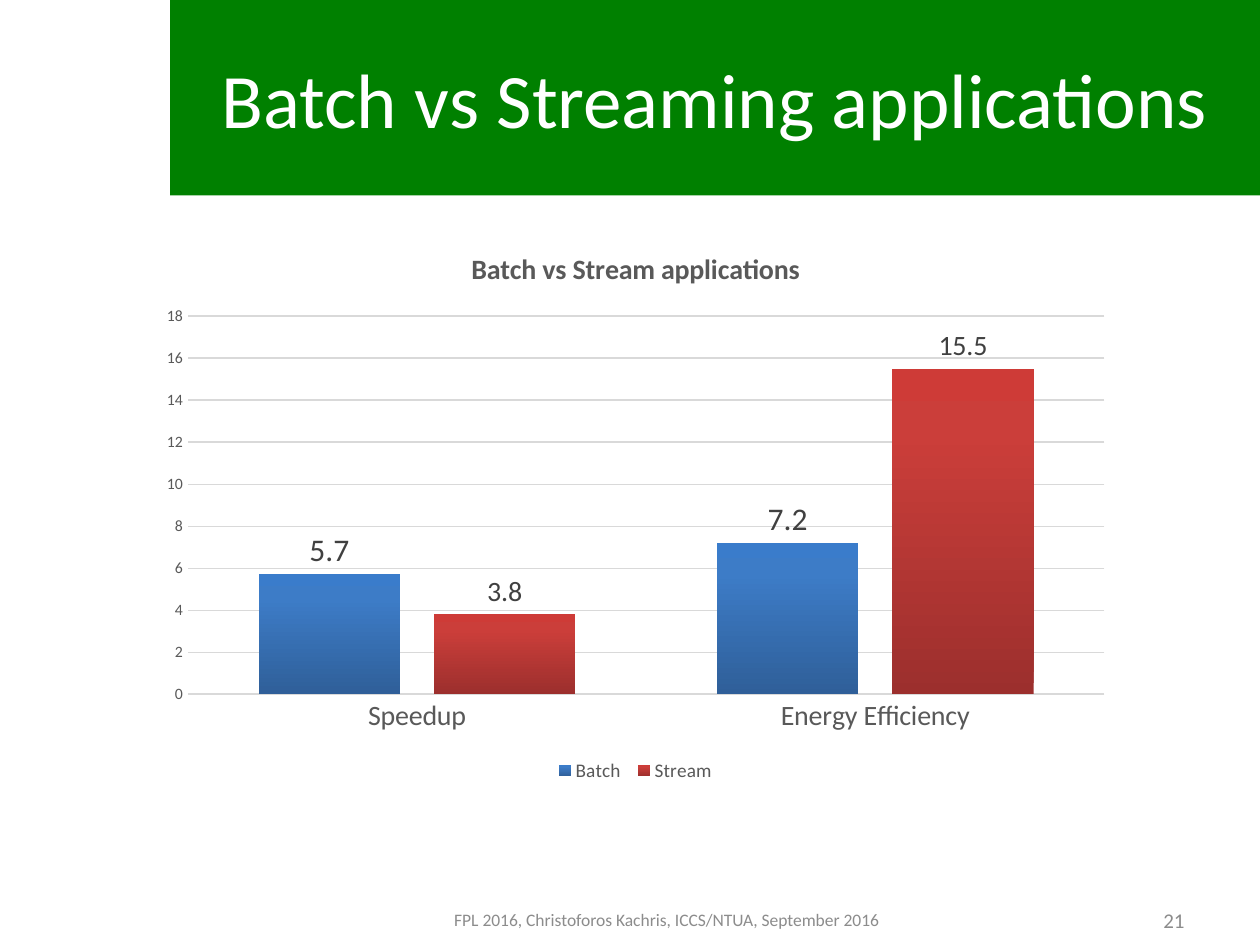
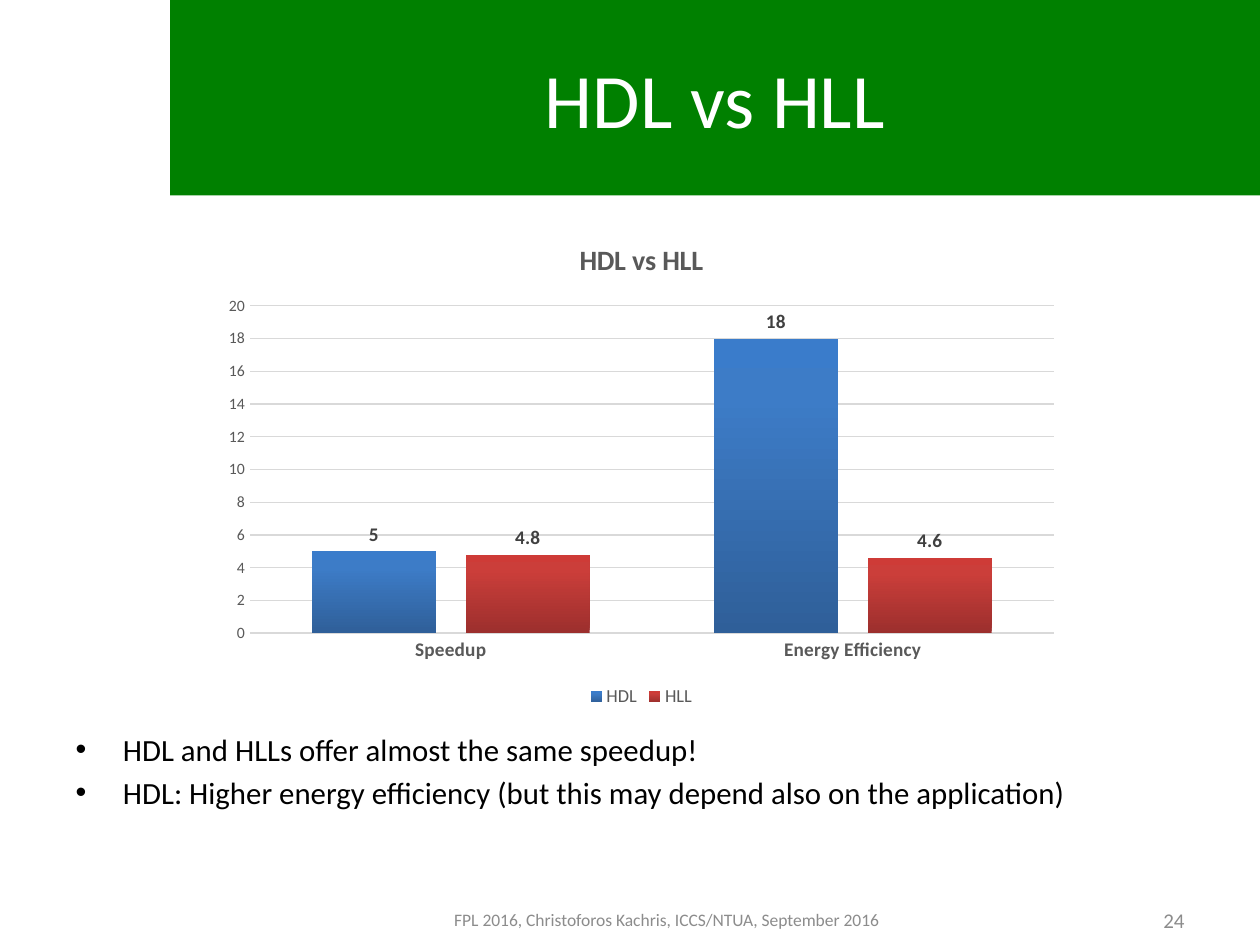
from copy import deepcopy
from pptx import Presentation
from pptx.chart.data import CategoryChartData
from pptx.dml.color import RGBColor
from pptx.enum.chart import XL_CHART_TYPE as CT, XL_LABEL_POSITION as LP
from pptx.enum.chart import XL_LEGEND_POSITION as LEG, XL_TICK_MARK as TICK
from pptx.enum.text import MSO_ANCHOR as ANCHOR, MSO_AUTO_SIZE as AUTO, PP_ALIGN as ALIGN
from pptx.util import Inches, Pt

FONT = "Calibri"
FOOTER = "FPL 2016, Christoforos Kachris, ICCS/NTUA, September 2016"
COLORS = {"band": "008000", "white": "FFFFFF", "black": "000000", "footer": "8C8C8C",
          "axis": "595959", "label": "404040", "grid": "D9D9D9"}
GRADIENTS = [["2F5F99", "3D7CC7", "3A7CCB"], ["9C2F2D", "CB3E3A", "CE3B37"]]
STOPS = [0, 0.8, 1]
CATEGORIES = ["Speedup", "Energy Efficiency"]

SLIDES = [
    {"title": "Batch vs Streaming applications", "number": "21", "layout": 5, "bullets": [],
     "chart": "Batch vs Stream applications", "box": (1.17, 1.8, 7.75, 4.45),
     "series": [("Batch ", (5.7, 7.2)), ("Stream", (3.8, 15.5))],
     "max": 18, "cat_size": 16, "legend_size": 11, "label_sizes": (18, 16), "bold": False},
    {"title": "HDL vs HLL", "number": "24", "layout": 1,
     "bullets": ["HDL and HLLs offer almost the same speedup!",
                 "HDL: Higher energy efficiency (but this may depend also on the application)"],
     "chart": "HDL vs HLL", "box": (1.68, 1.74, 6.82, 3.92),
     "series": [("HDL", (5, 18)), ("HLL", (4.8, 4.6))],
     "max": 20, "cat_size": 11, "legend_size": 10.5, "label_sizes": (11, 11), "bold": True},
]


def set_font(font, size, color, bold=False):
    font.name, font.size, font.bold = FONT, Pt(size), bold
    font.color.rgb = RGBColor.from_string(COLORS[color])


def write(p, text, size=18, color="black", bold=False, align=None):
    r = p.add_run()
    r.text = text
    set_font(r.font, size, color, bold)
    p.alignment = align


prs = Presentation()
prs.slide_width, prs.slide_height = Inches(10), Inches(7.5)

for spec_row in SLIDES:
    s = prs.slides.add_slide(prs.slide_layouts[spec_row["layout"]])

    title = s.shapes.title
    title.left, title.top, title.width, title.height = map(Inches, (1.35, 0, 8.65, 1.55))
    title.fill.solid()
    title.fill.fore_color.rgb = RGBColor.from_string(COLORS["band"])
    title.text_frame.auto_size = AUTO.NONE
    title.text_frame.vertical_anchor = ANCHOR.MIDDLE
    write(title.text_frame.paragraphs[0], spec_row["title"], size=44, color="white",
          align=ALIGN.CENTER)

    if spec_row["bullets"]:
        body = s.placeholders[1]
        body.left, body.top, body.width, body.height = map(Inches, (0.5, 5.75, 9, 0.95))
        tf = body.text_frame
        tf.auto_size = AUTO.NONE
        for i, bullet in enumerate(spec_row["bullets"]):
            p = tf.add_paragraph() if i else tf.paragraphs[0]
            p.space_before = Pt(3.5 if i else 0)
            write(p, bullet, size=17.6)

    for left, width, text, size, align in [
            (2.83, 4.92, FOOTER, 10, ALIGN.CENTER),
            (7.17, 2.33, spec_row["number"], 12, ALIGN.RIGHT)]:
        sp = s.shapes.add_textbox(Inches(left), Inches(7.1), Inches(width), Inches(0.4))
        tf = sp.text_frame
        tf.word_wrap = True
        tf.vertical_anchor = ANCHOR.MIDDLE
        write(tf.paragraphs[0], text, size=size, color="footer", align=align)

    data = CategoryChartData()
    data.categories = CATEGORIES
    for name, values in spec_row["series"]:
        data.add_series(name, values)
    chart = s.shapes.add_chart(CT.COLUMN_CLUSTERED, *map(Inches, spec_row["box"]), data).chart
    set_font(chart.font, 10, "black")
    chart.has_title = True
    write(chart.chart_title.text_frame.paragraphs[0], spec_row["chart"], size=16,
          color="axis", bold=True)
    chart.chart_title.include_in_layout = False
    chart.has_legend = True
    chart.legend.position = LEG.BOTTOM
    chart.legend.include_in_layout = False
    set_font(chart.legend.font, spec_row["legend_size"], "axis")

    cat, val = chart.category_axis, chart.value_axis
    for axis in (cat, val):
        axis.major_tick_mark = axis.minor_tick_mark = TICK.NONE
    set_font(cat.tick_labels.font, spec_row["cat_size"], "axis", spec_row["bold"])
    set_font(val.tick_labels.font, 9, "axis")
    val.minimum_scale, val.maximum_scale, val.major_unit = 0, spec_row["max"], 2
    val.format.line.fill.background()
    for line, width in [(cat.format.line, 1), (val.major_gridlines.format.line, 0.75)]:
        line.color.rgb = RGBColor.from_string(COLORS["grid"])
        line.width = Pt(width)

    plot = chart.plots[0]
    plot.gap_width, plot.overlap, plot.vary_by_categories = 100, -24, False
    for ser, gradient, size in zip(plot.series, GRADIENTS, spec_row["label_sizes"]):
        fill = ser.format.fill
        fill.gradient()
        fill.gradient_angle = 90
        gs_list = ser._element.xpath(".//a:gsLst")[0]
        gs_list.append(deepcopy(gs_list[-1]))
        for stop, position, color in zip(fill.gradient_stops, STOPS, gradient):
            stop.position = position
            stop.color.rgb = RGBColor.from_string(color)
        labels = ser.data_labels
        labels.show_value = True
        labels.position = LP.OUTSIDE_END
        set_font(labels.font, size, "label", spec_row["bold"])

prs.save("out.pptx")
